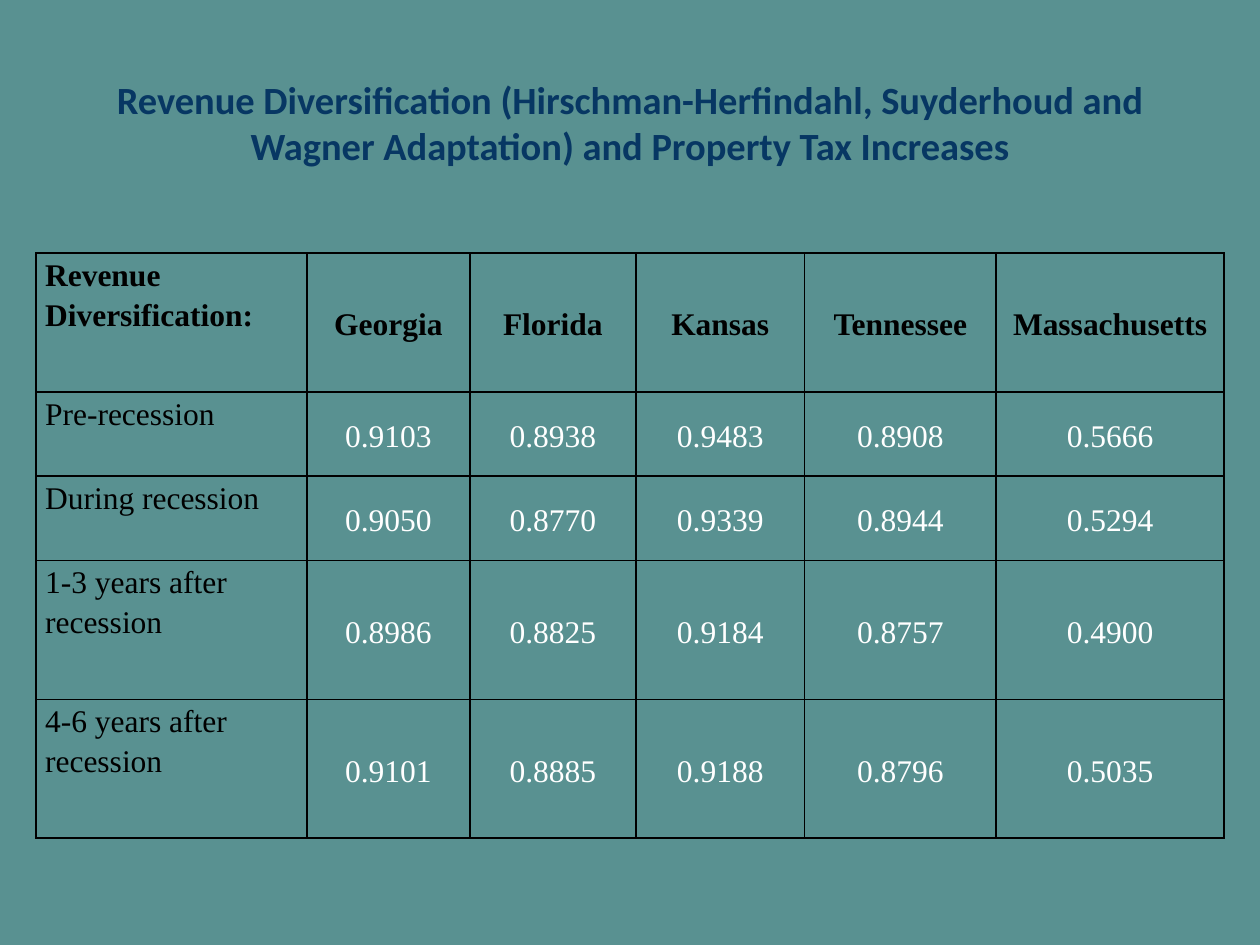
"""Builds a slide with a table of revenue diversification by state and recession phase."""
from lxml.etree import SubElement
from pptx import Presentation
from pptx.dml.color import RGBColor
from pptx.enum.text import MSO_ANCHOR as Anchor, PP_ALIGN as Align
from pptx.oxml.ns import qn
from pptx.util import Cm, Pt

BLACK, WHITE, NAVY, TEAL = "000000", "FFFFFF", "073763", "599191"
TITLE = ("Revenue Diversification (Hirschman-Herfindahl, Suyderhoud and "
         "Wagner Adaptation) and Property Tax Increases")
COLUMN_WIDTHS = [5.46, 3.28, 3.35, 3.4, 3.86, 4.6]
ROW_HEIGHTS = [2.8, 1.7, 1.7, 2.8, 2.8]
ROWS = [
    ["Revenue Diversification:", "Georgia", "Florida", "Kansas", "Tennessee", "Massachusetts"],
    ["Pre-recession", "0.9103", "0.8938", "0.9483", "0.8908", "0.5666"],
    ["During recession", "0.9050", "0.8770", "0.9339", "0.8944", "0.5294"],
    ["1-3 years after recession", "0.8986", "0.8825", "0.9184", "0.8757", "0.4900"],
    ["4-6 years after recession", "0.9101", "0.8885", "0.9188", "0.8796", "0.5035"],
]


def color(hex_string):
    return RGBColor.from_string(hex_string)


def write(paragraph, text, font_name, size, hex_color, bold, align):
    paragraph.alignment = align
    run = paragraph.add_run()
    run.text = text
    font = run.font
    font.name, font.size, font.bold = font_name, Pt(size), bold
    font.color.rgb = color(hex_color)


def add_title(slide):
    shape = slide.shapes.add_textbox(Cm(1.27), Cm(0.97), Cm(22.86), Cm(3))
    frame = shape.text_frame
    frame.word_wrap = True
    frame.vertical_anchor = Anchor.MIDDLE
    write(frame.paragraphs[0], TITLE, "Calibri", 22, NAVY, True, Align.CENTER)


def add_borders(cell, hex_color, width):
    properties = cell._tc.get_or_add_tcPr()
    for side in ("lnL", "lnR", "lnT", "lnB"):
        line = SubElement(properties, qn(f"a:{side}"), w=str(Pt(width)))
        fill = SubElement(line, qn("a:solidFill"))
        SubElement(fill, qn("a:srgbClr"), val=hex_color)


def fill_cell(cell, text, is_header, is_label):
    add_borders(cell, BLACK, 1)
    cell.fill.background()
    cell.margin_left = cell.margin_right = Cm(0.18)
    cell.margin_top = cell.margin_bottom = Cm(0)
    cell.vertical_anchor = Anchor.TOP if is_label else Anchor.MIDDLE
    paragraph = cell.text_frame.paragraphs[0]
    paragraph.line_spacing = 1.15
    write(paragraph, text, "Times New Roman", 18,
          BLACK if is_header or is_label else WHITE, is_header,
          Align.LEFT if is_label else Align.CENTER)


def add_revenue_table(slide):
    table = slide.shapes.add_table(
        len(ROWS), len(COLUMN_WIDTHS), Cm(0.73), Cm(5.1),
        Cm(sum(COLUMN_WIDTHS)), Cm(sum(ROW_HEIGHTS))).table
    table.first_row = table.horz_banding = False
    for column, width in zip(table.columns, COLUMN_WIDTHS):
        column.width = Cm(width)
    for row, height in zip(table.rows, ROW_HEIGHTS):
        row.height = Cm(height)
    for row_index, texts in enumerate(ROWS):
        for column_index, text in enumerate(texts):
            fill_cell(table.cell(row_index, column_index), text,
                      row_index == 0, column_index == 0)


def main():
    presentation = Presentation()
    presentation.slide_width, presentation.slide_height = Cm(25.4), Cm(19.05)
    slide = presentation.slides.add_slide(presentation.slide_layouts[6])
    background = slide.background.fill
    background.solid()
    background.fore_color.rgb = color(TEAL)
    add_title(slide)
    add_revenue_table(slide)
    presentation.save("out.pptx")


if __name__ == "__main__":
    main()
